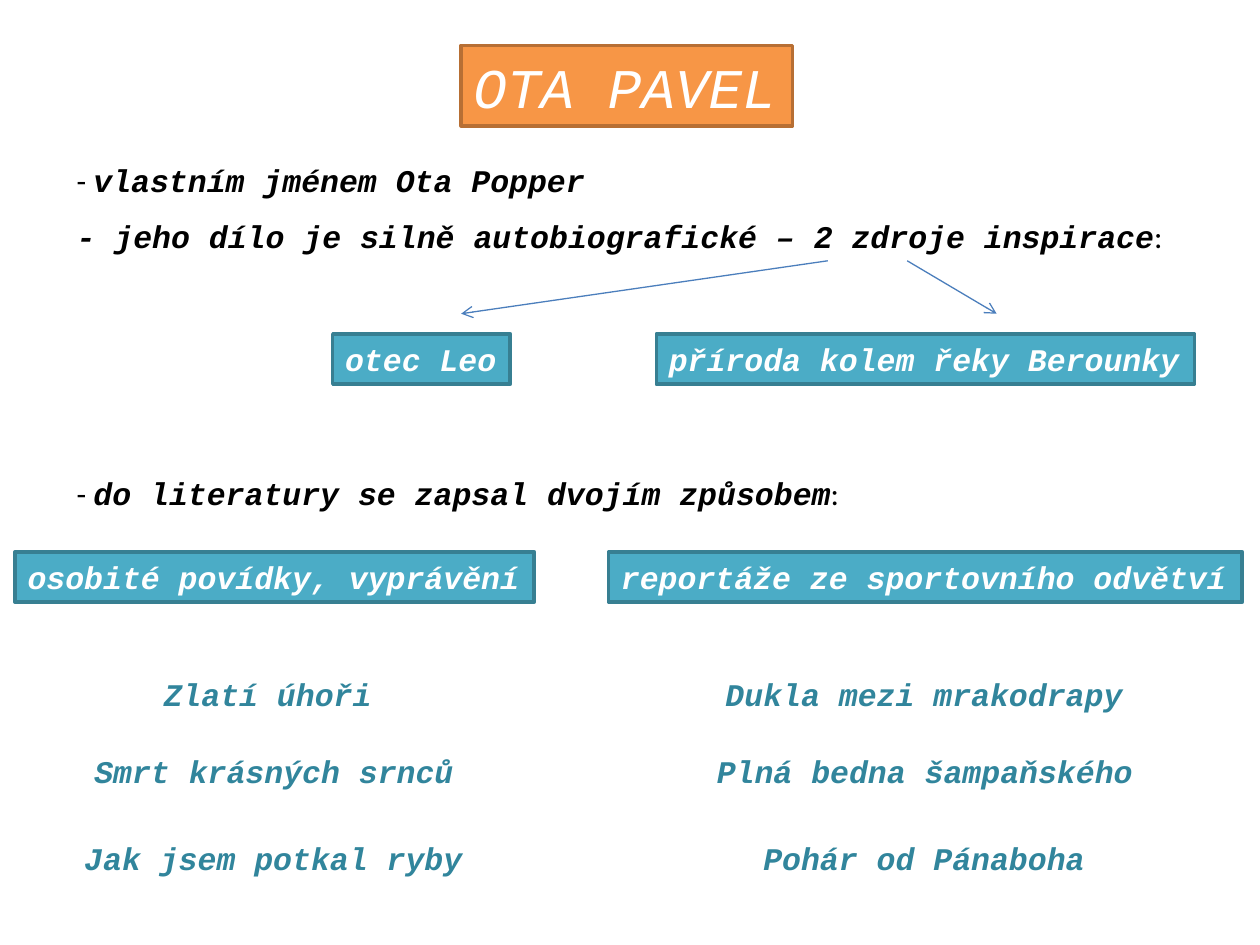
from lxml import etree
from pptx import Presentation
from pptx import util as u
from pptx.dml.color import RGBColor
from pptx.enum import shapes, text
from pptx.oxml.ns import qn

MONO, SANS = "Courier New", "Calibri"
BLACK, WHITE, TEAL = "000000", "FFFFFF", "31859C"
ROW = 0.4


def rgb(code):
    return RGBColor.from_string(code)


class Deck:
    def __init__(self):
        self.prs = Presentation()
        self.prs.slide_width = u.Inches(10)
        self.prs.slide_height = u.Inches(7.5)
        self.slide = self.prs.slides.add_slide(self.prs.slide_layouts[6])

    def fill_text(self, shape, parts, color, size=18, bold=True):
        """Set one line of text; bullet dashes and colons stay plain Calibri."""
        frame = shape.text_frame
        frame.word_wrap = False
        frame.auto_size = text.MSO_AUTO_SIZE.SHAPE_TO_FIT_TEXT
        para = frame.paragraphs[0]
        para.alignment = text.PP_ALIGN.LEFT
        for part in parts:
            run = para.add_run()
            run.text = part
            plain = part in ("- ", ":")
            font = run.font
            font.name = SANS if plain else MONO
            font.size = u.Pt(size)
            font.bold = bold and not plain
            font.italic = not plain
            font.color.rgb = rgb(color)

    def label(self, x, y, w, parts, color=BLACK):
        box = self.slide.shapes.add_textbox(
            u.Inches(x), u.Inches(y), u.Inches(w), u.Inches(ROW))
        self.fill_text(box, parts, color)

    def box(self, x, y, w, words, h=ROW, fill="4BACC6", edge="377F92", **style):
        rect = self.slide.shapes.add_shape(
            shapes.MSO_SHAPE.RECTANGLE,
            u.Inches(x), u.Inches(y), u.Inches(w), u.Inches(h))
        rect.shadow.inherit = False
        rect.fill.solid()
        rect.fill.fore_color.rgb = rgb(fill)
        rect.line.color.rgb = rgb(edge)
        rect.line.width = u.Pt(2)
        self.fill_text(rect, [words], WHITE, **style)

    def arrow(self, x1, y1, x2, y2):
        link = self.slide.shapes.add_connector(
            shapes.MSO_CONNECTOR.STRAIGHT,
            u.Inches(x1), u.Inches(y1), u.Inches(x2), u.Inches(y2))
        link.line.color.rgb = rgb("4B7EBC")
        link.line.width = u.Pt(0.75)
        props = link._element.spPr
        etree.SubElement(props.find(qn("a:ln")), qn("a:tailEnd"), type="arrow")
        etree.SubElement(props, qn("a:effectLst"))


def main():
    deck = Deck()
    deck.box(3.66, 0.36, 2.63, "OTA PAVEL", h=0.64,
             fill="F79646", edge="B76F34", size=32, bold=False)

    deck.label(0.51, 1.23, 4.26, ["- ", "vlastním jménem Ota Popper"])
    deck.label(0.51, 1.67, 8.86, [
        "- jeho dílo je silně autobiografické – 2 zdroje inspirace", ":"])
    deck.box(2.64, 2.65, 1.41, "otec Leo")
    deck.box(5.21, 2.65, 4.27, "příroda kolem řeky Berounky")
    for start, end in ((6.57, 3.66), (7.2, 7.91)):
        deck.arrow(start, 2.07, end, 2.49)

    deck.label(0.51, 3.71, 6.29,
               ["- ", "do literatury se zapsal dvojím způsobem", ":"])
    deck.box(0.12, 4.38, 4.12, "osobité povídky, vyprávění")
    deck.box(4.83, 4.38, 5.03, "reportáže ze sportovního odvětví")

    rows = (5.31, 5.92, 6.61)
    tales = ((1.2, 1.86, "Zlatí úhoři"),
             (0.65, 3.07, "Smrt krásných srnců"),
             (0.57, 3.22, "Jak jsem potkal ryby"))
    sports = ((5.66, 3.37, "Dukla mezi mrakodrapy"),
              (5.59, 3.52, "Plná bedna šampaňského"),
              (5.96, 2.76, "Pohár od Pánaboha"))
    for books in (tales, sports):
        for y, (x, w, title) in zip(rows, books):
            deck.label(x, y, w, [title], TEAL)

    deck.prs.save("out.pptx")


if __name__ == "__main__":
    main()
